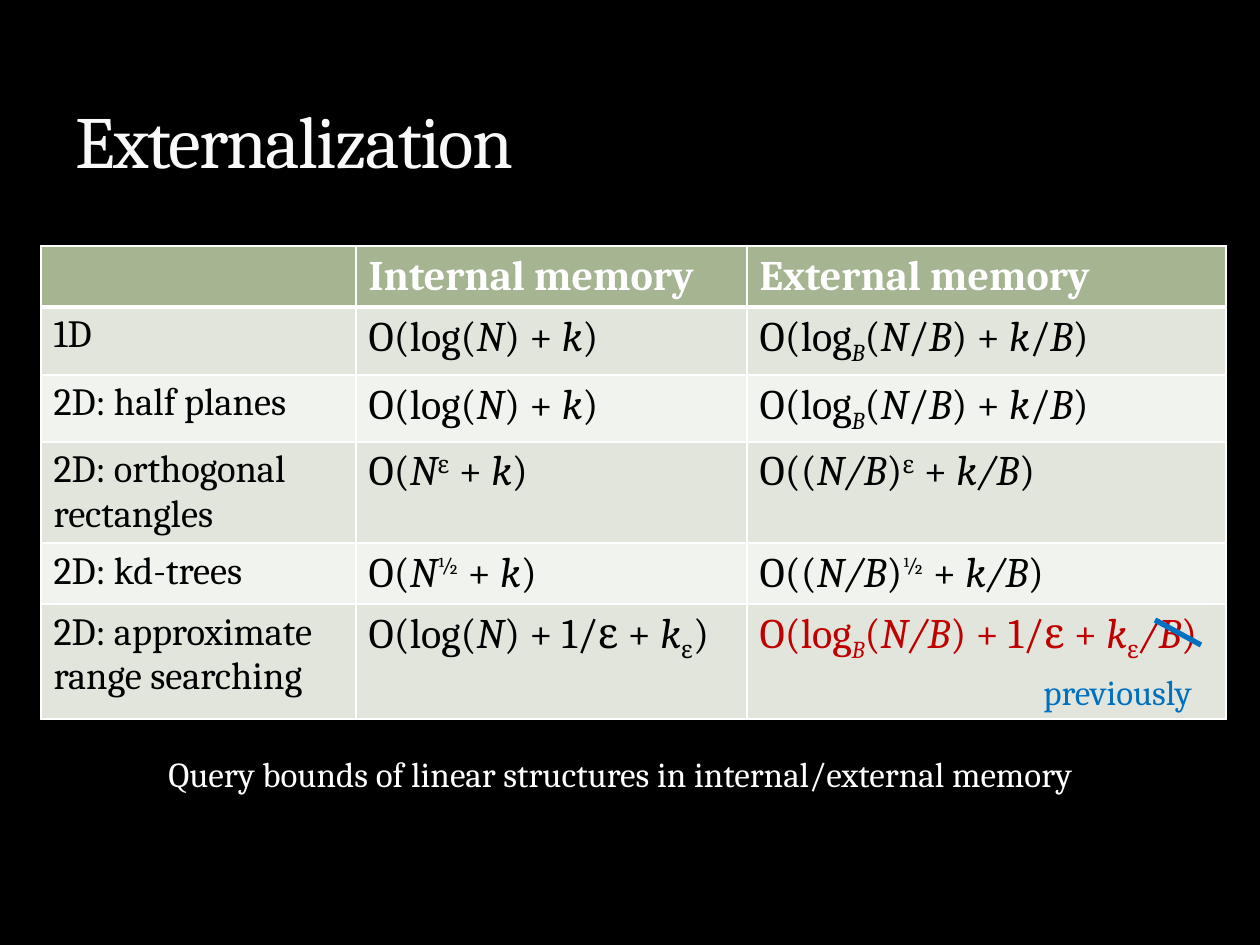
"""Build a slide comparing query bounds in internal and external memory."""
from lxml import etree
from pptx import Presentation
from pptx.dml.color import RGBColor
from pptx.enum import shapes, text
from pptx.oxml.ns import qn
from pptx.util import Emu, Pt

SCALE = 914400 / 126
FONT = "Cambria"
COLORS = {"black": "000000", "white": "FFFFFF", "title": "F9F9F9", "header": "A5B592",
          "odd": "E1E5DC", "even": "F0F3EE", "red": "C00000", "blue": "0070C0"}
BASELINES = {"_": "-25000", "^": "30000"}
COLUMNS = [315, 391, 479]
HEIGHTS = [60, 68, 67, 101, 61, 115]
# Pieces are split at |, with * for italic, _ for subscript and ^ for superscript.
ROWS = [
    ["", "Internal memory", "External memory"],
    ["1D", "O(log(|*N|) + |*k|)", "O(log|_*B|(|*N|/|*B|) + |*k|/|*B|)"],
    ["2D: half planes", "O(log(|*N|) + |*k|)", "O(log|_*B|(|*N|/|*B|) + |*k|/|*B|)"],
    ["2D: orthogonal rectangles", "O(|*N|^ε| + |*k|)", "O((|*N/B|)|^ε| + |*k/B|)"],
    ["2D: kd-trees", "O(|*N|^½| + |*k|)", "O((|*N/B|)|^½| + |*k/B|)"],
    ["2D: approximate range searching", "O(log(|*N|) + 1/ε + |*k|_ε|)",
     "O(log|_*B|(|*N/B|) + 1/ε + |*k|_ε|*/B|)"],
]


def px(*lengths):
    return [Emu(round(length * SCALE)) for length in lengths]


def write(para, markup, size, color, bold=False):
    for piece in markup.split("|"):
        words = piece.lstrip("*_^")
        marks = piece[:len(piece) - len(words)]
        span = para.add_run()
        span.text = words
        span.font.name, span.font.size = FONT, Pt(size)
        span.font.bold, span.font.italic = bold, "*" in marks
        span.font.color.rgb = RGBColor.from_string(COLORS[color])
        for mark in marks.replace("*", ""):
            span.font._element.set("baseline", BASELINES[mark])


deck = Presentation()
deck.slide_width, deck.slide_height = px(1260, 945)
page = deck.slides.add_slide(deck.slide_layouts[6])
page.background.fill.solid()
page.background.fill.fore_color.rgb = RGBColor.from_string(COLORS["black"])

frame = page.shapes.add_table(len(ROWS), len(COLUMNS), *px(41, 246, sum(COLUMNS), sum(HEIGHTS)))
table = frame.table
for column, width in zip(table.columns, px(*COLUMNS)):
    column.width = width
for row, height in zip(table.rows, px(*HEIGHTS)):
    row.height = height

for r, labels in enumerate(ROWS):
    fill = "header" if r == 0 else "odd" if r % 2 else "even"
    for c, label in enumerate(labels):
        cell = table.cell(r, c)
        properties = cell._tc.get_or_add_tcPr()
        for side in "LRTB":
            heavy = (r, side) in [(0, "B"), (1, "T")]
            border = etree.SubElement(properties, qn(f"a:ln{side}"), w=str(Pt(3 if heavy else 1)))
            solid = etree.SubElement(border, qn("a:solidFill"))
            etree.SubElement(solid, qn("a:srgbClr"), val=COLORS["white"])
        cell.fill.solid()
        cell.fill.fore_color.rgb = RGBColor.from_string(COLORS[fill])
        color = "white" if r == 0 else "red" if (r, c) == (5, 2) else "black"
        if label:
            write(cell.text_frame.paragraphs[0], label, 22 if r and c == 0 else 24, color, r == 0)

for label, place, size, color in [
    ("Externalization", (63, 21, 1134, 168), 42, "title"),
    ("Query bounds of linear structures in internal/external memory", (156, 746, 982, 55), 20, "white"),
    ("previously", (1031, 664, 183, 55), 20, "blue"),
]:
    box = page.shapes.add_textbox(*px(*place))
    box.text_frame.word_wrap = True
    write(box.text_frame.paragraphs[0], label, size, color)
    if color == "title":
        box.text_frame.vertical_anchor = text.MSO_ANCHOR.BOTTOM
        box.text_frame.paragraphs[0].runs[0].font._element.set("spc", "-100")

strike = page.shapes.add_connector(shapes.MSO_CONNECTOR.STRAIGHT, *px(1155, 620, 1201, 645))
strike.line.color.rgb = RGBColor.from_string(COLORS["blue"])
strike.line.width = Pt(3)
etree.SubElement(strike._element.spPr, qn("a:effectLst"))

deck.save("out.pptx")
